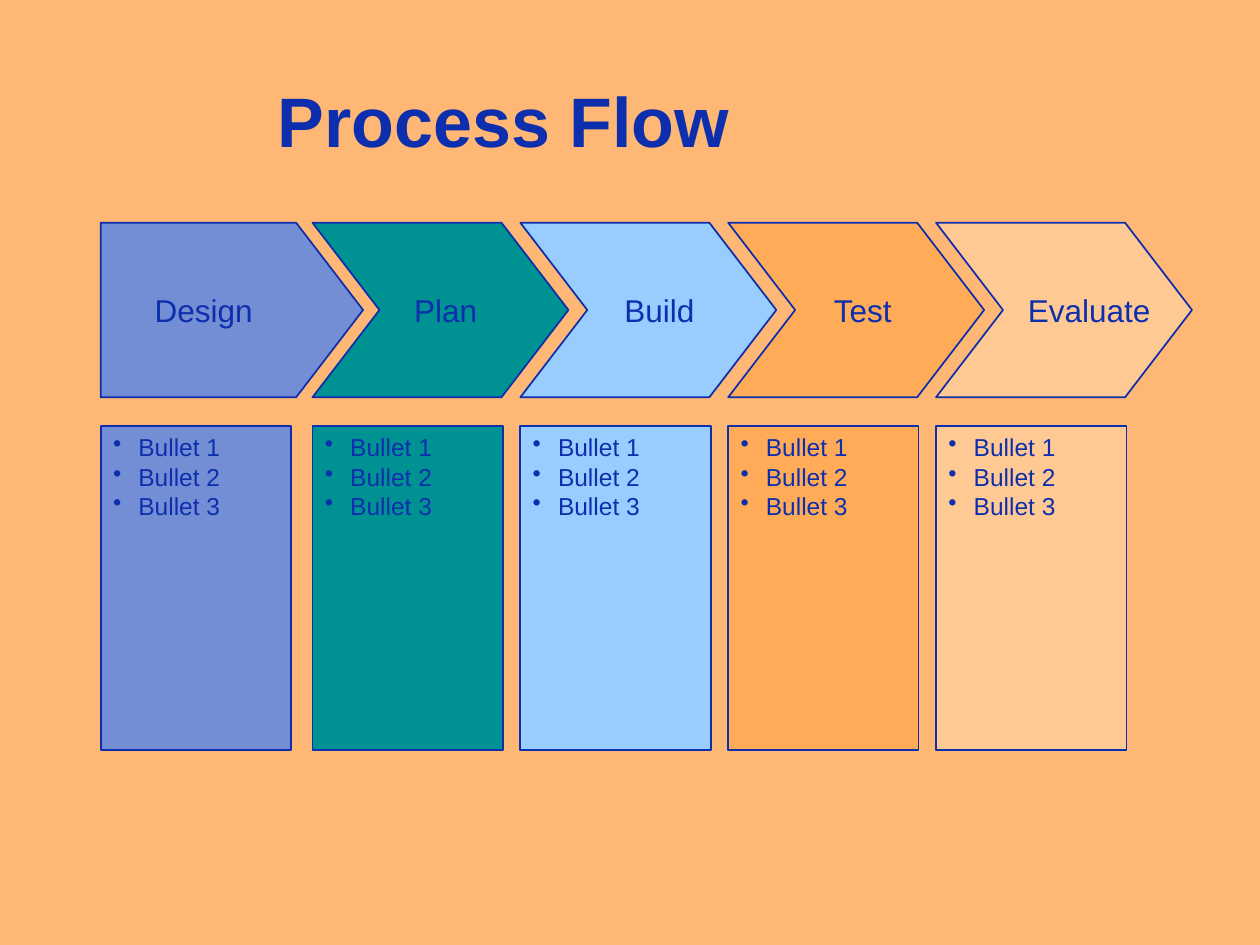
import dataclasses

import lxml.etree
import pptx
import pptx.dml.color
import pptx.enum.shapes
import pptx.enum.text
import pptx.oxml.ns
import pptx.util

Cm = pptx.util.Cm
Pt = pptx.util.Pt
RGB = pptx.dml.color.RGBColor.from_string
ALIGN = pptx.enum.text.PP_ALIGN
ANCHOR = pptx.enum.text.MSO_ANCHOR


@dataclasses.dataclass
class Theme:
    font: str = "Arial"
    background: str = "FFB775"
    ink: str = "0E2FAD"
    title_size: int = 40
    label_size: int = 18
    bullet_size: int = 14
    line_width: int = 1


theme = Theme()


def write_text(frame, text, *, size, bold=False, align=ALIGN.LEFT,
               anchor=ANCHOR.TOP, wrap=True, bullet=None):
    """Fill a text frame, one paragraph for each line of text."""
    frame.word_wrap = wrap
    frame.auto_size = pptx.enum.text.MSO_AUTO_SIZE.NONE
    frame.vertical_anchor = anchor
    for index, line in enumerate(text.split("\n")):
        para = frame.add_paragraph() if index else frame.paragraphs[0]
        para.alignment = align
        if bullet:
            properties = para._p.get_or_add_pPr()
            properties.set("marL", str(Cm(0.51)))
            properties.set("indent", str(-Cm(0.51)))
            mark = lxml.etree.SubElement(properties, pptx.oxml.ns.qn("a:buChar"))
            mark.set("char", bullet)
        span = para.add_run()
        span.text = line
        span.font.name = theme.font
        span.font.size = Pt(size)
        span.font.bold = bold
        span.font.color.rgb = RGB(theme.ink)


def paint(shape, color):
    shape.shadow.inherit = False
    shape.fill.solid()
    shape.fill.fore_color.rgb = RGB(color)
    shape.line.color.rgb = RGB(theme.ink)
    shape.line.width = Pt(theme.line_width)


deck = pptx.Presentation()
deck.slide_width, deck.slide_height = Cm(25.4), Cm(19.05)
page = deck.slides.add_slide(deck.slide_layouts.get_by_name("Title Only"))
page.background.fill.solid()
page.background.fill.fore_color.rgb = RGB(theme.background)

title = page.shapes.title
title.left, title.top, title.width, title.height = Cm(1.27), Cm(0.71), Cm(17.75), Cm(3.4)
write_text(title.text_frame, "Process Flow", size=theme.title_size, bold=True,
           align=ALIGN.CENTER, anchor=ANCHOR.MIDDLE)

# Step name, fill, label left and label width in cm
steps = [
    ("Design", "748ED6", 2.87, 2.49),
    ("Plan", "009193", 8.1, 1.78),
    ("Build", "99CCFF", 12.34, 1.93),
    ("Test", "FFAB57", 16.56, 1.75),
    ("Evaluate", "FFC993", 20.47, 2.97),
]
first_left, second_left, pitch = 2.03, 6.3, 4.19
lefts = [first_left] + [second_left + pitch * index for index in range(len(steps) - 1)]

for left, (name, color, _, _) in zip(lefts, steps):
    box = page.shapes.add_shape(pptx.enum.shapes.MSO_SHAPE.RECTANGLE,
                                Cm(left), Cm(8.59), Cm(3.84), Cm(6.53))
    paint(box, color)
    write_text(box.text_frame, "Bullet 1\nBullet 2\nBullet 3",
               size=theme.bullet_size, bullet="•")

arrow_top, arrow_middle, arrow_bottom, point = 4.49, 6.25, 8.01, 1.35
for left, (name, color, _, _) in zip(lefts, steps):
    is_first = left == first_left
    shoulder = left + (3.94 if is_first else 3.81)
    outline = [(shoulder, arrow_top), (shoulder + point, arrow_middle),
               (shoulder, arrow_bottom), (left, arrow_bottom)]
    if not is_first:
        outline.append((left + point, arrow_middle))
    builder = page.shapes.build_freeform(Cm(left), Cm(arrow_top))
    builder.add_line_segments([(Cm(x), Cm(y)) for x, y in outline], close=True)
    paint(builder.convert_to_shape(), color)

for name, _, label_left, label_width in steps:
    label = page.shapes.add_textbox(Cm(label_left), Cm(5.74), Cm(label_width), Cm(1.02))
    write_text(label.text_frame, name, size=theme.label_size, wrap=False)

deck.save("out.pptx")
